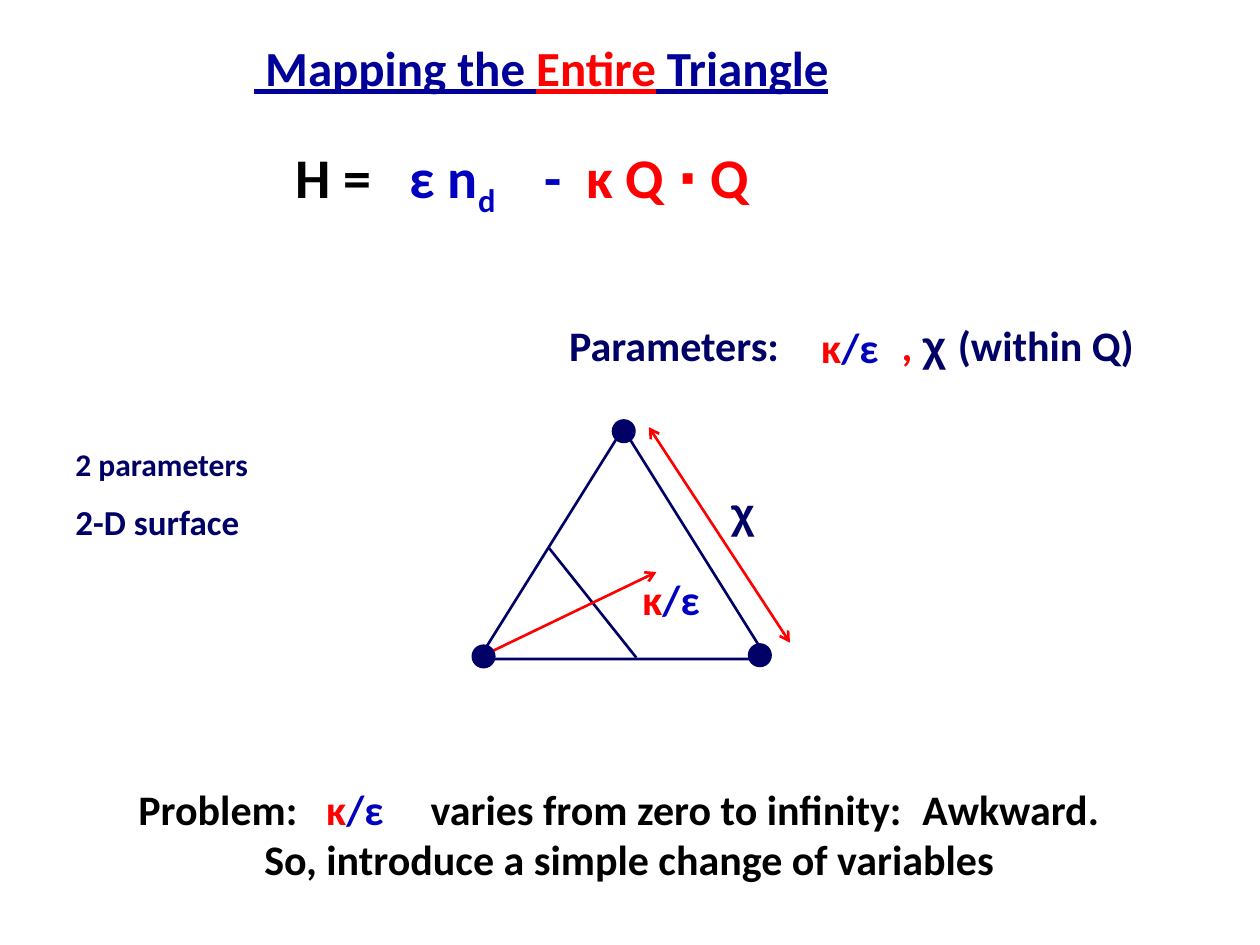
import pptx
import pptx.dml.color
import pptx.enum.shapes
import pptx.enum.text
import pptx.oxml.ns
import pptx.util
from lxml import etree

Pt = pptx.util.Pt
RGB = pptx.dml.color.RGBColor.from_string
ALIGN = pptx.enum.text.PP_ALIGN
SHAPE = pptx.enum.shapes.MSO_SHAPE
qn = pptx.oxml.ns.qn

THEME = {
    "navy": RGB("000066"), "title": RGB("000099"), "blue": RGB("0000C0"),
    "red": RGB("FF0000"), "black": RGB("000000"),
    "heading": 28, "formula": 32, "body": 24, "note": 20, "small": 18,
    "text font": "Calibri", "symbol font": "Arial",
}


def add_text(shapes, place, paragraphs):
    """Each paragraph is (format dict, spans); a span is (text, colour, size, extra font values)."""
    box = shapes.add_textbox(*map(Pt, place))
    box.text_frame.word_wrap = True
    for index, (layout, spans) in enumerate(paragraphs):
        para = box.text_frame.paragraphs[0] if index == 0 else box.text_frame.add_paragraph()
        layout = dict(layout)
        tabs = layout.pop("tabs", ())
        margin = layout.pop("margin", 0)
        for name, value in layout.items():
            setattr(para, name, value)
        properties = para._p.get_or_add_pPr()
        if margin:
            properties.set("marL", str(Pt(margin)))
        if tabs:
            tab_list = etree.SubElement(properties, qn("a:tabLst"))
            for stop in tabs:
                etree.SubElement(tab_list, qn("a:tab"), pos=str(Pt(stop)), algn="l")
        for text, colour, size, extra in spans:
            span = para.add_run()
            span.text = text
            span.font.color.rgb = THEME[colour]
            values = {"name": THEME["text font"], "size": Pt(THEME[size]), "bold": True, **extra}
            baseline = values.pop("baseline", None)
            for name, value in values.items():
                setattr(span.font, name, value)
            if baseline:
                span._r.get_or_add_rPr().set("baseline", str(baseline))


def add_line(shapes, start, end, colour, arrows=()):
    line = shapes.add_connector(
        pptx.enum.shapes.MSO_CONNECTOR.STRAIGHT, *map(Pt, start + end))
    line.line.color.rgb = THEME[colour]
    line.line.width = Pt(1.5)
    outline = line.line._get_or_add_ln()
    for arrow in arrows:
        etree.SubElement(outline, qn(arrow), type="arrow")
    etree.SubElement(line._element.spPr, qn("a:effectLst"))


deck = pptx.Presentation()
deck.slide_width, deck.slide_height = Pt(720), Pt(540)
page = deck.slides.add_slide(deck.slide_layouts[6])

underlined = {"underline": True}
symbol = {"name": THEME["symbol font"]}

add_text(page.shapes, (138.2, 18, 419.8, 71.3), [({}, [
    (" Mapping the ", "title", "heading", underlined),
    ("Entire", "red", "heading", underlined),
    (" Triangle", "title", "heading", underlined),
])])
add_text(page.shapes, (36, 250.6, 149.8, 97.2), [
    ({}, [("2 parameters", "navy", "small", {})]),
    ({"space_before": Pt(10)}, [("2-D surface", "navy", "note", {})]),
])

# Triangle diagram
diagram = page.shapes.add_group_shape().shapes
triangle = diagram.add_shape(SHAPE.ISOSCELES_TRIANGLE, *map(Pt, (273.6, 244.8, 164.9, 131.8)))
triangle.shadow.inherit = False
triangle.fill.background()
triangle.line.color.rgb = THEME["navy"]
triangle.line.width = Pt(1.5)

add_line(diagram, (313.2, 312.5), (363.6, 375.8), "navy")
add_line(diagram, (273.6, 375.8), (375.1, 326.9), "red", ["a:tailEnd"])
add_line(diagram, (370.8, 244.1), (451.4, 367.2), "red", ["a:headEnd", "a:tailEnd"])
add_text(diagram, (410.4, 274.3, 50.4, 36), [({}, [("χ", "navy", "body", symbol)])])

DOT = 13
for x, y in [(356.4, 246.4), (434.2, 374.4), (276.3, 375.1)]:
    dot = diagram.add_shape(SHAPE.OVAL, *map(Pt, (x - DOT / 2, y - DOT / 2, DOT, DOT)))
    dot.shadow.inherit = False
    dot.fill.solid()
    dot.fill.fore_color.rgb = THEME["navy"]
    dot.line.color.rgb = THEME["navy"]
    dot.line.width = Pt(0.75)

# Formula and parameters
add_text(page.shapes, (162, 77.8, 350.6, 84.2), [({"tabs": (65, 142, 166)}, [
    ("H =\t", "black", "formula", {}),
    ("ε n", "blue", "formula", {}),
    ("d", "blue", "formula", {"baseline": -25000}),
    ("\t-\t", "blue", "formula", {}),
    ("κ Q ⋅ Q", "red", "formula", {}),
])])
add_text(page.shapes, (318.2, 175, 396, 41), [({"tabs": (190,)}, [
    ("Parameters:", "navy", "body", {}),
    ("\t", "navy", "heading", symbol),
    (", ", "red", "body", {}),
    ("χ ", "navy", "body", symbol),
    ("(within Q)", "navy", "body", {}),
])])

for left, top, width in [(462.2, 180, 54.7), (360, 324, 50.4), (179.3, 444.2, 54.7)]:
    add_text(page.shapes, (left, top, width, 36), [({}, [
        ("κ", "red", "body", {}), ("/ε", "blue", "body", {}),
    ])])

add_text(page.shapes, (72, 444.2, 570.2, 65.5), [
    ({"tabs": (167, 448)}, [
        ("Problem:\tvaries from zero to infinity:\tAwkward.", "black", "body", {})]),
    ({"alignment": ALIGN.CENTER, "margin": 5}, [
        ("So, introduce a simple change of variables", "black", "body", {})]),
])

deck.save("out.pptx")
